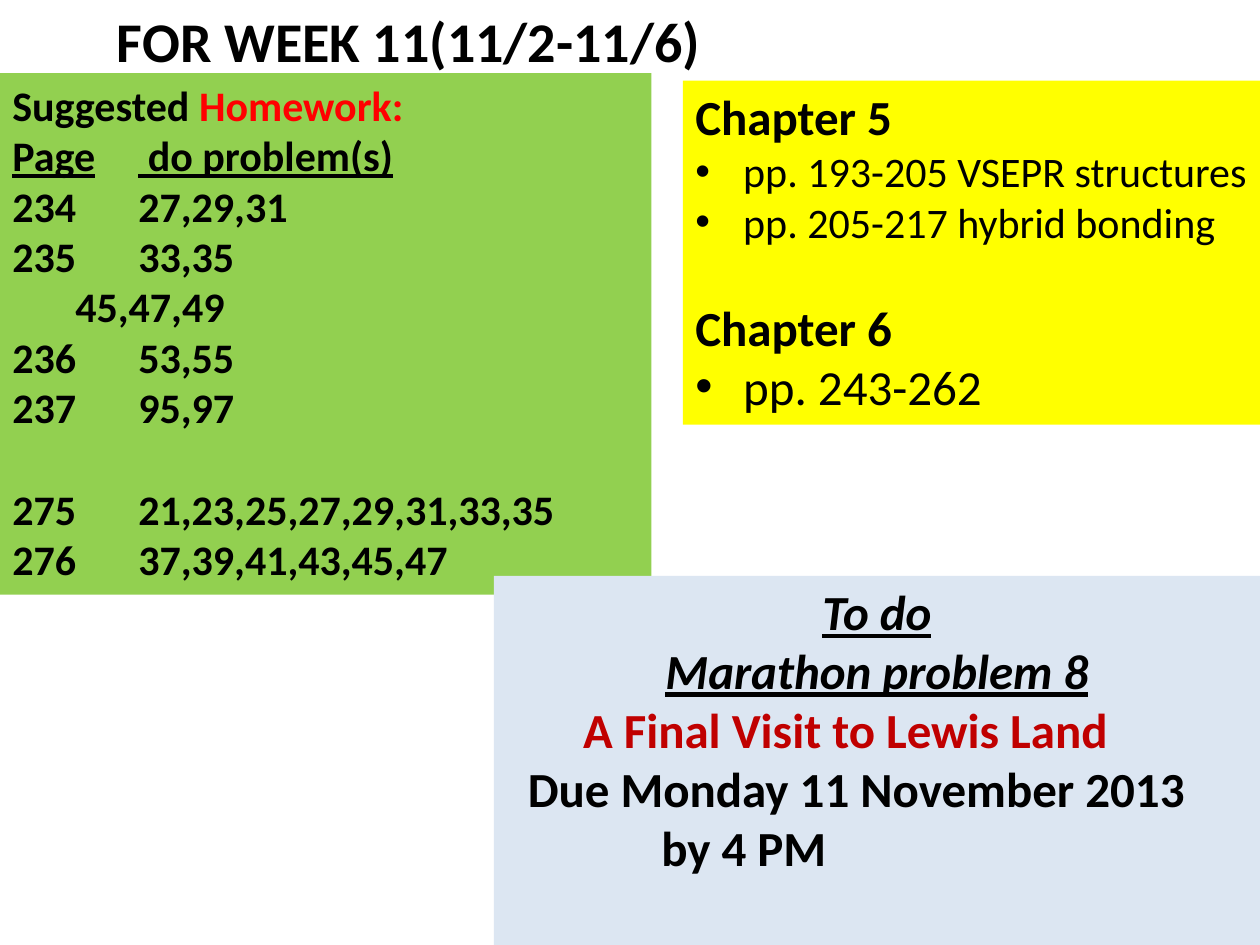
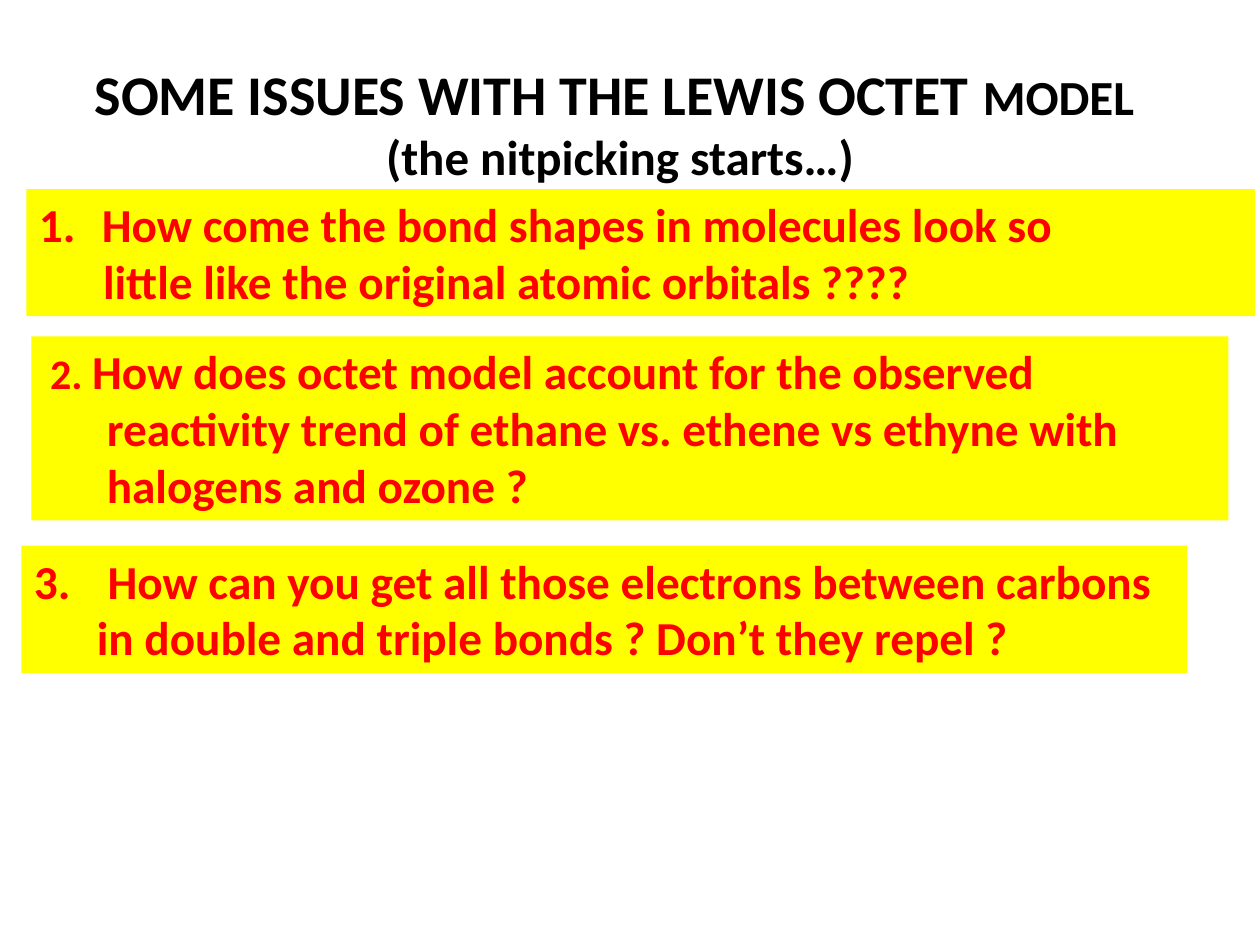
from lxml import etree
from pptx import Presentation
from pptx import util as u
from pptx.dml.color import RGBColor
from pptx.enum import shapes, text
from pptx.oxml.ns import qn

FONT = "Calibri"
COLORS = {
    "black": "000000", "red": "FF0000", "dark_red": "C00000",
    "green": "92D050", "yellow": "FFFF00", "pale_blue": "DCE6F2",
}
BLANK_LINE = 29.3


def para(*runs, **layout):
    return {"runs": runs, **layout}


def run(words, size, color="black", **style):
    return {"words": words, "size": size, "color": color, **style}


def plain(words, size):
    return run(words, size, bold=False)


HOMEWORK_ROWS = [
    ("234", "27,29,31", 1.27, 0),
    ("235", "33,35", 1.27, 0),
    ("", "45,47,49", 1.28, 0),
    ("236", "53,55", 1.34, 0),
    ("237", "95,97", 1.34, 0),
    ("275", "21,23,25,27,29,31,33,35", 1.41, BLANK_LINE),
    ("276", "37,39,41,43,45,47", 1.41, 0),
]
HOMEWORK = [
    para(run("Suggested ", 24), run("Homework:", 24, "red")),
    para(run("Page", 24, underline=True), run("\t", 24),
         run(" do problem(s)", 24, underline=True), tab=1.08),
] + [
    para(run(f"{page}\t{problems}", 24), tab=tab, before=gap)
    for page, problems, tab, gap in HOMEWORK_ROWS
]

READING_INDENT = {"left": 0.38, "first": -0.38}
READING = [
    para(run("Chapter 5", 28), **READING_INDENT),
    para(plain("pp. 193-205 VSEPR structures", 24), bullet="•", **READING_INDENT),
    para(plain("pp. 205-217 hybrid bonding", 24), bullet="•", **READING_INDENT),
    para(run("Chapter 6", 28), before=BLANK_LINE, **READING_INDENT),
    para(plain("pp. 243-262", 28), bullet="•", **READING_INDENT),
]

TO_DO = [
    para(run(words, 28, italic=True, underline=True), center=True)
    for words in ("To do", "Marathon problem 8")
] + [
    para(run("A Final Visit to Lewis Land", 28, "dark_red"), left=0.61),
    para(run("Due Monday 11 November 2013", 28), left=0.17),
    para(run("by 4 PM", 28), left=1.23),
]

WEEK_TITLE = [para(run("FOR WEEK 11(11/2-11/6)", 32))]
ISSUES_TITLE = [para(
    run("SOME ISSUES WITH THE LEWIS OCTET ", 32), run("MODEL ", 28),
    run("(the nitpicking starts…)", 28, new_line=True), center=True)]

BOND_SHAPES = [
    para(run("How come the bond shapes in molecules look so", 27, "red"),
         number="arabicPeriod", left=0.5, first=-0.5),
    para(run("little like the original atomic orbitals ????", 27, "red"), left=0.51),
]
REACTIVITY = [para(
    run("2. ", 24, "red"),
    run("How does octet model account for the observed reactivity trend of "
        "ethane vs. ethene vs ethyne with halogens and ozone ?", 27, "red"),
    left=0.5, first=-0.45)]
REPULSION = [para(
    run("3.\t How can you get all those electrons between carbons in double "
        "and triple bonds ? Don’t they repel ?", 27, "red"),
    left=0.5, first=-0.5)]

SLIDES = [
    [
        ((0, 0.58, 5.17, 4.14), "green", HOMEWORK),
        ((5.42, 0.64, 4.58, 2.73), "yellow", READING),
        ((0.83, 0, 9.17, 0.64), None, WEEK_TITLE),
        ((3.92, 4.57, 6.08, 2.93), "pale_blue", TO_DO),
    ],
    [
        ((0.42, 0.42, 9, 0.67), None, ISSUES_TITLE),
        ((0.21, 1.5, 9.75, 1.01), "yellow", BOND_SHAPES),
        ((0.25, 2.67, 9.5, 1.46), "yellow", REACTIVITY),
        ((0.17, 4.33, 9.25, 1.01), "yellow", REPULSION),
    ],
]


def rgb(name):
    return RGBColor.from_string(COLORS[name])


def lay_out(paragraph, content):
    paragraph.alignment = (text.PP_ALIGN.CENTER if content.get("center")
                           else text.PP_ALIGN.LEFT)
    paragraph.space_before = u.Pt(content.get("before", 0))
    props = paragraph._p.get_or_add_pPr()
    props.set("marL", str(u.Inches(content.get("left", 0))))
    props.set("indent", str(u.Inches(content.get("first", 0))))
    if "bullet" in content:
        etree.SubElement(props, qn("a:buFont"), typeface="Arial")
        etree.SubElement(props, qn("a:buChar"), char=content["bullet"])
    elif "number" in content:
        etree.SubElement(props, qn("a:buFont"), typeface="+mj-lt")
        etree.SubElement(props, qn("a:buAutoNum"), type=content["number"])
    else:
        etree.SubElement(props, qn("a:buNone"))
    if "tab" in content:
        tabs = etree.SubElement(props, qn("a:tabLst"))
        etree.SubElement(tabs, qn("a:tab"), pos=str(u.Inches(content["tab"])), algn="l")


def write_run(paragraph, content):
    if content.get("new_line"):
        paragraph.add_line_break()
    piece = paragraph.add_run()
    piece.text = content["words"]
    font = piece.font
    font.name, font.size = FONT, u.Pt(content["size"])
    font.bold = content.get("bold", True)
    font.italic = content.get("italic", False)
    font.underline = content.get("underline", False)
    font.color.rgb = rgb(content["color"])


def add_panel(slide, box, fill, paragraphs):
    place = [u.Inches(length) for length in box]
    if fill:
        panel = slide.shapes.add_shape(shapes.MSO_SHAPE.RECTANGLE, *place)
        panel.shadow.inherit = False
        panel.fill.solid()
        panel.fill.fore_color.rgb = rgb(fill)
        panel.line.fill.background()
    else:
        panel = slide.shapes.add_textbox(*place)
    frame = panel.text_frame
    frame.word_wrap = True
    frame.vertical_anchor = text.MSO_ANCHOR.TOP
    for index, content in enumerate(paragraphs):
        paragraph = frame.add_paragraph() if index else frame.paragraphs[0]
        lay_out(paragraph, content)
        for piece in content["runs"]:
            write_run(paragraph, piece)


def main():
    deck = Presentation()
    deck.slide_width, deck.slide_height = u.Inches(10), u.Inches(7.5)
    for panels in SLIDES:
        slide = deck.slides.add_slide(deck.slide_layouts[6])
        for panel in panels:
            add_panel(slide, *panel)
    deck.save("out.pptx")


if __name__ == "__main__":
    main()
